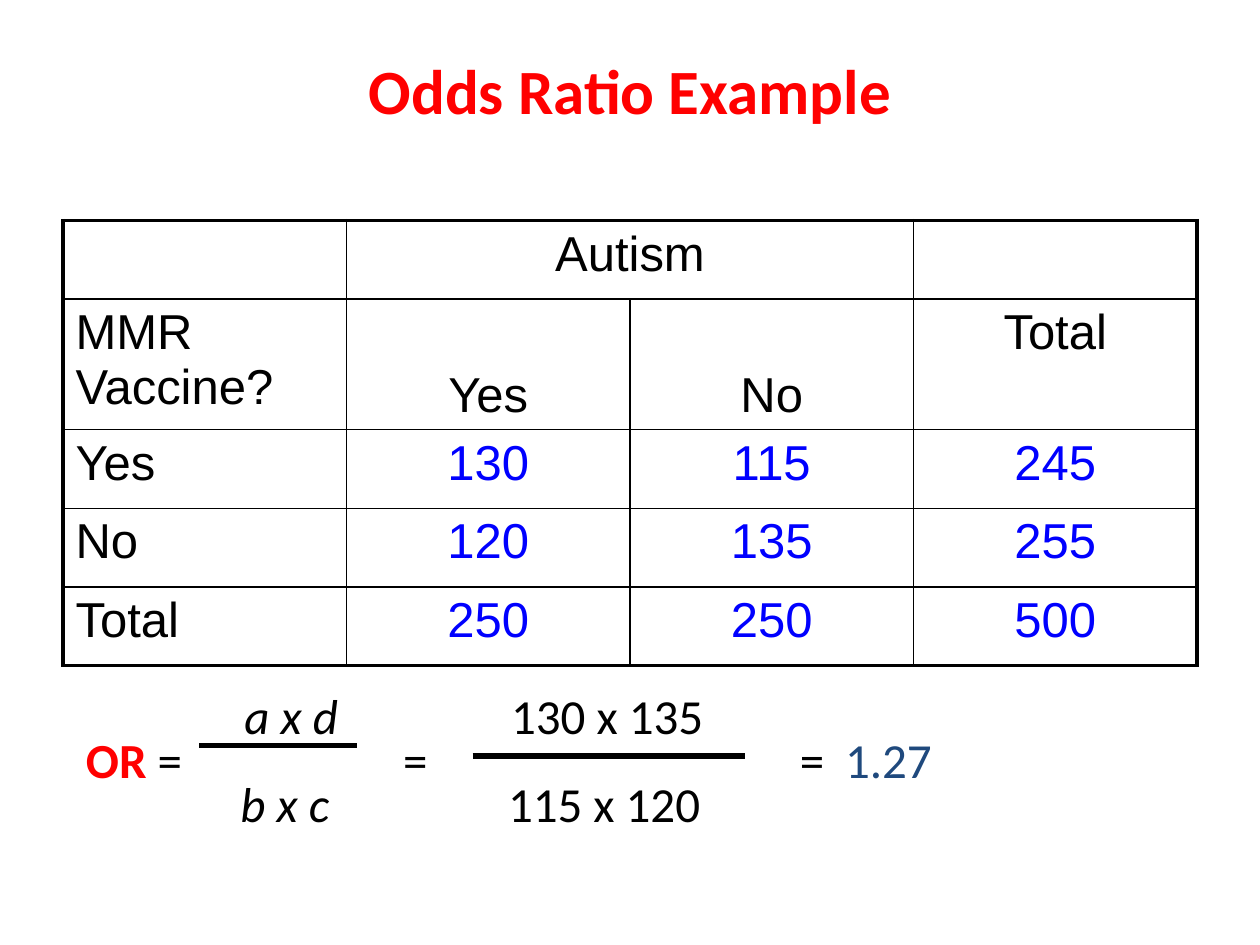
from dataclasses import dataclass

from lxml.etree import SubElement
from pptx import Presentation
from pptx.dml.color import RGBColor as Rgb
from pptx.enum.shapes import MSO_CONNECTOR as Connector
from pptx.enum.text import MSO_ANCHOR as Anchor, PP_ALIGN as Align
from pptx.oxml import parse_xml
from pptx.oxml.ns import nsdecls, qn
from pptx.util import Pt

PX = 7620  # EMU per px, 120 px to the inch


@dataclass(frozen=True)
class Theme:
    black: str = "000000"
    red: str = "FF0000"
    blue: str = "0000FF"
    navy: str = "1F497D"
    head_font: str = "Calibri"
    table_font: str = "Arial"
    title_size: int = 36
    body_size: int = 28
    outer_line: float = 2.25
    inner_line: float = 1
    bar_line: float = 3


THEME = Theme()


def px(*values):
    return [value * PX for value in values]


def style(span, font, size, color, bold=False, italic=False):
    span.font.name = font
    span.font.size = Pt(size)
    span.font.color.rgb = Rgb.from_string(color)
    span.font.bold = bold
    span.font.italic = italic


def add_title(page, box, text):
    frame = page.shapes.add_textbox(*px(*box)).text_frame
    frame.word_wrap = True
    frame.vertical_anchor = Anchor.MIDDLE
    frame.text = text
    para = frame.paragraphs[0]
    para.alignment = Align.CENTER
    style(para.runs[0], THEME.head_font, THEME.title_size, THEME.red, bold=True)


def set_borders(cell, widths):
    """Draw the left, right, top and bottom borders, widths in points."""
    cell.fill.background()
    props = cell._tc.get_or_add_tcPr()
    for index, (side, width) in enumerate(zip("LRTB", widths)):
        props.insert(index, parse_xml(
            f'<a:ln{side} {nsdecls("a")} w="{Pt(width)}"><a:solidFill>'
            f'<a:srgbClr val="{THEME.black}"/></a:solidFill></a:ln{side}>'))


def add_counts_table(page, box, rows, heights):
    left, top, width, height = box
    last_row, last_col = len(rows) - 1, len(rows[0]) - 1
    table = page.shapes.add_table(len(rows), len(rows[0]), *px(*box)).table
    table.first_row = table.horz_banding = False
    for column in table.columns:
        column.width = width * PX // len(rows[0])
    for row, row_height in zip(table.rows, heights):
        row.height = row_height * PX

    for r, values in enumerate(rows):
        for c, value in enumerate(values):
            cell = table.cell(r, c)
            edges = (c == 0, c == last_col, r == 0, r == last_row)
            set_borders(cell, [THEME.outer_line if edge else THEME.inner_line
                               for edge in edges])
            cell.text_frame.text = value
            para = cell.text_frame.paragraphs[0]
            para.alignment = Align.LEFT if c == 0 else Align.CENTER
            para.font.size = Pt(THEME.body_size)
            color = THEME.blue if r > 1 and c > 0 else THEME.black
            for span in para.runs:
                style(span, THEME.table_font, THEME.body_size, color)

    # The group heading spans both outcomes, whose labels sit at the bottom
    table.cell(0, 1).merge(table.cell(0, 2))
    for c in (1, 2):
        table.cell(1, c).vertical_anchor = Anchor.BOTTOM


def set_tabs(para, stops):
    tabs = SubElement(para._p.get_or_add_pPr(), qn("a:tabLst"))
    for stop in stops:
        SubElement(tabs, qn("a:tab"), pos=str(stop * PX), algn="l")


def add_bar(page, start, end, y):
    bar = page.shapes.add_connector(Connector.STRAIGHT, *px(start, y, end, y))
    bar.line.color.rgb = Rgb.from_string(THEME.black)
    bar.line.width = Pt(THEME.bar_line)
    SubElement(bar._element.spPr, qn("a:effectLst"))


def add_formula(page, box, lines, bars):
    left, top = box[:2]
    frame = page.shapes.add_textbox(*px(*box)).text_frame
    frame.word_wrap = True
    for index, (stops, spans) in enumerate(lines):
        para = frame.add_paragraph() if index else frame.paragraphs[0]
        para.line_spacing = 0.75
        set_tabs(para, stops)
        for text, color, bold, italic in spans:
            span = para.add_run()
            span.text = text
            style(span, THEME.head_font, THEME.body_size, color, bold, italic)

    # Fraction bars
    for start, end, y in bars:
        add_bar(page, left + start, left + end, top + y)


def main():
    deck = Presentation()
    deck.slide_width, deck.slide_height = px(1200, 900)
    page = deck.slides.add_slide(deck.slide_layouts[6])

    add_title(page, (60, 0, 1080, 170), "Odds Ratio Example")

    rows = [
        ("", "Autism", "", ""),
        ("MMR Vaccine?", "Yes", "No", "Total"),
        ("Yes", "130", "115", "245"),
        ("No", "120", "135", "255"),
        ("Total", "250", "250", "500"),
    ]
    add_counts_table(page, (60, 210, 1080, 417), rows, (75, 117, 75, 75, 75))

    black = THEME.black
    lines = [
        ((151, 405), [("\ta x d", black, False, True),
                      ("\t130 x 135", black, False, False)]),
        ((302, 680, 723), [("OR", THEME.red, True, False),
                           (" =\t=\t=\t", black, False, False),
                           ("1.27", THEME.navy, False, False)]),
        ((147, 402), [("\tb x c", black, False, True),
                      ("\t115 x 120", black, False, False)]),
    ]
    bars = [(120, 270, 50), (380, 640, 60)]
    add_formula(page, (70, 660, 1160, 139), lines, bars)

    deck.save("out.pptx")


if __name__ == "__main__":
    main()
